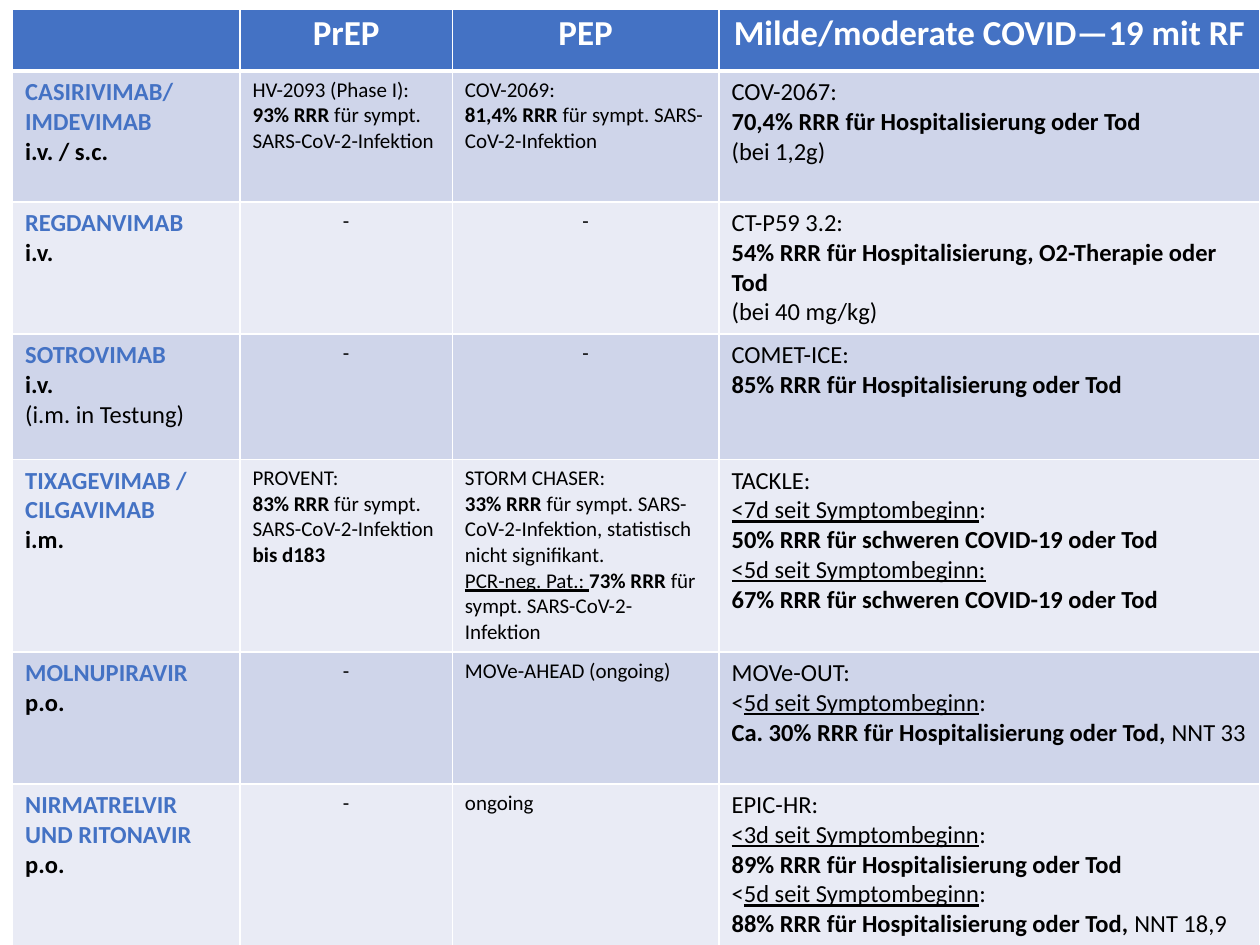
from lxml.etree import SubElement
from pptx import Presentation
from pptx.dml.color import RGBColor
from pptx.enum.text import PP_ALIGN
from pptx.oxml.ns import qn
from pptx.util import Inches, Pt

BLUE, DARK, LIGHT = "4472C4", "CFD5EA", "E9EBF5"
WHITE, BLACK = "FFFFFF", "000000"

# Column and row shares of the table, in hundredths of an inch
COLS = [180, 168, 211, 428]
ROWS = [49, 104, 105, 100, 153, 105, 128]

# "|" parts the runs; a leading "*" is bold, "_" underlined, "#" bold and blue
HEAD = ["", "PrEP", "PEP", "Milde/moderate COVID—19 mit RF"]
INFECT = "für sympt. SARS-CoV-2-Infektion"
CLINIC = "RRR für Hospitalisierung oder Tod"
SEVERE = "RRR für schweren COVID-19 oder Tod"
SINCE = "d seit Symptombeginn"
DRUGS = [
    [["#CASIRIVIMAB/ IMDEVIMAB", "*i.v. / s.c."],
     ["HV-2093 (Phase I):", f"*93% RRR |{INFECT}"],
     ["COV-2069:", f"*81,4% RRR |{INFECT}"],
     ["COV-2067:", f"*70,4% {CLINIC}", "(bei 1,2g)"]],
    [["#REGDANVIMAB", "*i.v."],
     ["-"],
     ["-"],
     ["CT-P59 3.2:", "*54% RRR für Hospitalisierung, O2-Therapie oder Tod",
      "(bei 40 mg/kg)"]],
    [["#SOTROVIMAB", "*i.v.", "(i.m. in Testung)"],
     ["-"],
     ["-"],
     ["COMET-ICE:", f"*85% {CLINIC}"]],
    [["#TIXAGEVIMAB / CILGAVIMAB", "*i.m."],
     ["PROVENT:", f"*83% RRR |{INFECT} |*bis d183"],
     ["STORM CHASER:",
      f"*33% RRR |{INFECT}, statistisch nicht signifikant.",
      f"_PCR-neg. Pat.: |*73% RRR |{INFECT}"],
     ["TACKLE:", f"_<7{SINCE}|:", f"*50% {SEVERE}",
      f"_<5{SINCE}:", f"*67% {SEVERE}"]],
    [["#MOLNUPIRAVIR", "*p.o."],
     ["-"],
     ["MOVe-AHEAD (ongoing)"],
     ["MOVe-OUT:", f"<|_5{SINCE}|:", f"*Ca. 30% {CLINIC}, |NNT 33"]],
    [["#NIRMATRELVIR UND RITONAVIR |*p.o."],
     ["-"],
     ["ongoing"],
     ["EPIC-HR:", f"_<3{SINCE}|:", f"*89% {CLINIC}",
      f"<|_5{SINCE}|:", f"*88% {CLINIC}, |NNT 18,9"]],
]


def color(code):
    return RGBColor.from_string(code)


class Deck:
    font = "Calibri"

    def __init__(self, wide, high):
        self.prs = Presentation()
        self.prs.slide_width, self.prs.slide_height = Inches(wide), Inches(high)
        self.slide = self.prs.slides.add_slide(self.prs.slide_layouts[6])

    def grid(self, left, top, wide, high, cols, rows):
        """Place a table by shares of the slide and split it by weights."""
        w, h = self.prs.slide_width, self.prs.slide_height
        table = self.slide.shapes.add_table(
            len(rows), len(cols), int(left * w), int(top * h),
            int(wide * w), int(high * h)).table
        for col, part in zip(table.columns, cols):
            col.width = int(wide * w * part / sum(cols))
        for row, part in zip(table.rows, rows):
            row.height = int(high * h * part / sum(rows))
        return table

    def paint(self, cell, fill, top=1, base=1):
        """Draw the white borders of a cell, then its fill."""
        props = cell._tc.get_or_add_tcPr()
        for side, width in zip("LRTB", (1, 1, top, base)):
            line = SubElement(props, qn(f"a:ln{side}"), w=str(Pt(width)))
            solid = SubElement(line, qn("a:solidFill"))
            SubElement(solid, qn("a:srgbClr"), val=WHITE)
        cell.fill.solid()
        cell.fill.fore_color.rgb = color(fill)

    def label(self, cell, lines, size, ink=BLACK, align=PP_ALIGN.LEFT, space=None):
        """Fill a cell with one paragraph per line, run by run."""
        frame = cell.text_frame
        for i, line in enumerate(lines):
            para = frame.add_paragraph() if i else frame.paragraphs[0]
            para.alignment, para.line_spacing = align, space
            for part in line.split("|"):
                mark = part[:1] if part[:1] in ("*", "_", "#") else ""
                run = para.add_run()
                run.text = part[len(mark):]
                font = run.font
                font.name, font.size = self.font, Pt(size)
                font.bold, font.underline = mark in ("*", "#"), mark == "_"
                font.color.rgb = color(BLUE if mark == "#" else ink)


def main():
    deck = Deck(10, 7.5)
    table = deck.grid(0.01, 0.01, 0.99, 0.99, COLS, ROWS)

    # Header row
    for c, title in enumerate(HEAD):
        cell = table.cell(0, c)
        deck.paint(cell, BLUE, base=3)
        cell.margin_left = cell.margin_right = Inches(0.07)
        cell.margin_top = cell.margin_bottom = 0
        if title:
            deck.label(cell, ["*" + title], 20, WHITE, PP_ALIGN.CENTER, 1.07)

    # One banded row per drug
    for r, drug in enumerate(DRUGS, 1):
        for c, lines in enumerate(drug):
            cell = table.cell(r, c)
            deck.paint(cell, DARK if r % 2 else LIGHT, top=3 if r == 1 else 1)
            align = PP_ALIGN.CENTER if lines == ["-"] else PP_ALIGN.LEFT
            deck.label(cell, lines, 12 if c in (1, 2) else 14, align=align)

    deck.prs.save("out.pptx")


if __name__ == "__main__":
    main()
